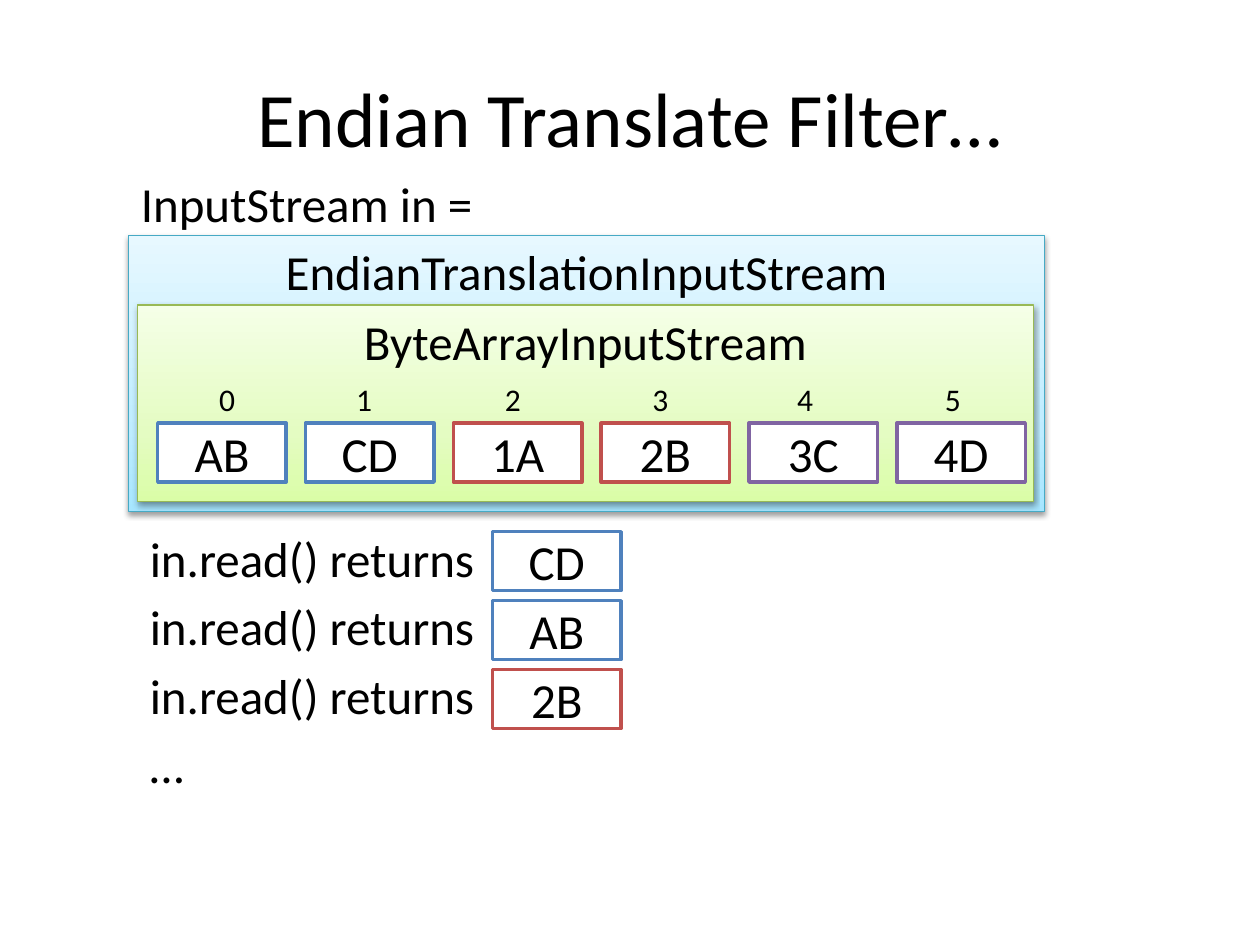
import pptx
import pptx.dml.color
import pptx.enum.shapes
import pptx.enum.text
import pptx.oxml
import pptx.oxml.ns
import pptx.util
from lxml import etree
from pptx.util import Cm

BLACK, WHITE = "000000", "FFFFFF"
BLUE, RED, PURPLE = "4F81BD", "C0504D", "8064A2"
TOP = pptx.enum.text.MSO_ANCHOR.TOP
MIDDLE = pptx.enum.text.MSO_ANCHOR.MIDDLE
LEFT = pptx.enum.text.PP_ALIGN.LEFT
CENTER = pptx.enum.text.PP_ALIGN.CENTER


def color(value):
    return pptx.dml.color.RGBColor.from_string(value)


def add_color(parent, value):
    tag = pptx.oxml.ns.qn("a:srgbClr")
    return etree.SubElement(parent, tag, val=value)


class SlideBuilder:
    font = "Calibri"
    body_size = 28

    def __init__(self, slide):
        self.slide = slide

    def set_text(self, shape, text, size, alignment, anchor):
        frame = shape.text_frame
        frame.text = text
        frame.vertical_anchor = anchor
        paragraph = frame.paragraphs[0]
        paragraph.alignment = alignment
        font = paragraph.runs[0].font
        font.name = self.font
        font.size = pptx.util.Pt(size)
        font.color.rgb = color(BLACK)

    def label(self, text, left, top, width, height, size=body_size):
        """Add a one-line text that grows with its wording."""
        box = self.slide.shapes.add_textbox(Cm(left), Cm(top), Cm(width), Cm(height))
        self.set_text(box, text, size, LEFT, TOP)
        box.text_frame.word_wrap = False
        box.text_frame.auto_size = pptx.enum.text.MSO_AUTO_SIZE.SHAPE_TO_FIT_TEXT

    def title(self, text, left, top, width, height):
        box = self.slide.shapes.add_textbox(Cm(left), Cm(top), Cm(width), Cm(height))
        self.set_text(box, text, 44, CENTER, MIDDLE)
        box.text_frame.word_wrap = True

    def rectangle(self, text, left, top, width, height, line, line_width, anchor):
        shape = self.slide.shapes.add_shape(
            pptx.enum.shapes.MSO_SHAPE.RECTANGLE,
            Cm(left), Cm(top), Cm(width), Cm(height))
        shape.shadow.inherit = False
        shape.line.color.rgb = color(line)
        shape.line.width = pptx.util.Pt(line_width)
        self.set_text(shape, text, self.body_size, CENTER, anchor)
        return shape

    def byte_cell(self, text, left, top, line):
        shape = self.rectangle(text, left, top, 2.59, 1.19, line, 2, MIDDLE)
        shape.fill.solid()
        shape.fill.fore_color.rgb = color(WHITE)

    def stream_panel(self, text, left, top, width, height, line, shades):
        """Add a shadowed panel whose shades run from bottom to top."""
        shape = self.rectangle(text, left, top, width, height, line, 0.75, TOP)
        shape.fill.gradient()
        shape.fill.gradient_angle = 90
        properties = shape._element.spPr
        qn = pptx.oxml.ns.qn
        stops = properties.find(".//" + qn("a:gsLst"))
        for stop in list(stops):
            stops.remove(stop)
        for percent, shade in zip((0, 35, 100), shades):
            add_color(etree.SubElement(stops, qn("a:gs"), pos=str(percent * 1000)), shade)
        shadow = etree.SubElement(
            properties.find(qn("a:effectLst")), qn("a:outerShdw"),
            blurRad=str(pptx.util.Pt(3.1)), dist=str(pptx.util.Pt(1.6)),
            dir="5400000", rotWithShape="0")
        etree.SubElement(add_color(shadow, BLACK), qn("a:alpha"), val="38000")


def main():
    presentation = pptx.Presentation()
    presentation.slide_width = Cm(25.4)
    presentation.slide_height = Cm(19.05)
    builder = SlideBuilder(presentation.slides.add_slide(presentation.slide_layouts[6]))

    builder.title("Endian Translate Filter…", 1.27, 0.76, 22.86, 3.18)
    builder.label("InputStream in =", 2.59, 3.38, 7.26, 1.45)
    builder.stream_panel("EndianTranslationInputStream", 2.59, 4.75, 18.47, 5.56,
                         "46AAC5", ("A7E6FF", "C1EDFF", "E7F8FF"))
    builder.stream_panel("ByteArrayInputStream", 2.77, 6.15, 18.06, 3.96,
                         "98B955", ("DAFDA7", "E4FCC2", "F5FFE7"))

    stored_bytes = [("AB", BLUE, 4.17), ("CD", BLUE, 6.93), ("1A", RED, 9.93),
                    ("2B", RED, 12.9), ("3C", PURPLE, 15.82), ("4D", PURPLE, 18.8)]
    for index, (value, line, index_left) in enumerate(stored_bytes):
        builder.byte_cell(value, 3.18 + 2.98 * index, 8.53, line)
        builder.label(str(index), index_left, 7.54, 0.84, 1.02, 18)

    row_top, row_pitch = 10.52, 1.39
    for value, line in (("CD", BLUE), ("AB", BLUE), ("2B", RED)):
        builder.label("in.read() returns", 2.77, row_top, 7.37, 1.45)
        builder.byte_cell(value, 9.93, row_top + 0.2, line)
        row_top += row_pitch
    builder.label("…", 2.77, row_top, 1.19, 1.45)

    presentation.save("out.pptx")


if __name__ == "__main__":
    main()
